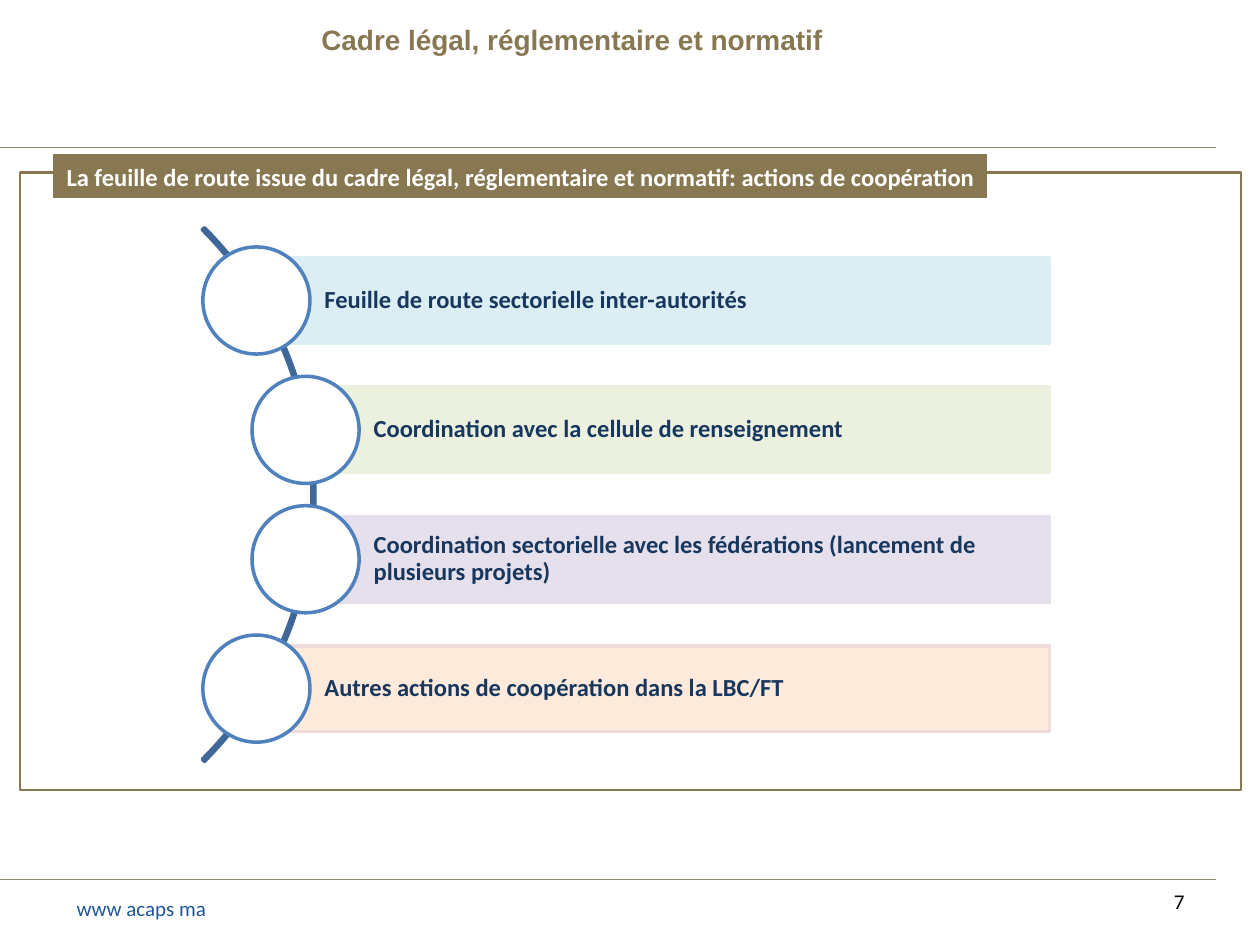
from dataclasses import dataclass

from lxml import etree
from pptx import Presentation
from pptx.dml.color import RGBColor
from pptx.enum.shapes import MSO_CONNECTOR, MSO_SHAPE
from pptx.enum.text import MSO_ANCHOR, PP_ALIGN
from pptx.oxml.ns import qn
from pptx.util import Inches, Pt

RECTANGLE, OVAL, ARC = MSO_SHAPE.RECTANGLE, MSO_SHAPE.OVAL, MSO_SHAPE.BLOCK_ARC
STRAIGHT = MSO_CONNECTOR.STRAIGHT
LEFT, CENTER, RIGHT = PP_ALIGN.LEFT, PP_ALIGN.CENTER, PP_ALIGN.RIGHT
TOP, MIDDLE = MSO_ANCHOR.TOP, MSO_ANCHOR.MIDDLE

SLIDE_WIDTH, SLIDE_HEIGHT = Inches(10), Inches(7.5)
COLUMNS, ROWS = 1000, 750


@dataclass(frozen=True)
class Theme:
    """Colours, fonts and type sizes of the slide."""

    gold: str = "887852"
    rule: str = "90876B"
    link: str = "205595"
    navy: str = "17375E"
    arc: str = "3F6797"
    ring: str = "4F81BD"
    white: str = "FFFFFF"
    black: str = "000000"
    body_font: str = "Calibri"
    title_font: str = "Arial"
    title_size: int = 16
    body_size: int = 14
    small_size: int = 12


@dataclass(frozen=True)
class Box:
    """A rectangle in grid columns and rows."""

    left: float
    top: float
    width: float
    height: float

    def emu(self):
        """Return left, top, width and height as slide lengths."""
        column, row = SLIDE_WIDTH / COLUMNS, SLIDE_HEIGHT / ROWS
        return (round(self.left * column), round(self.top * row),
                round(self.width * column), round(self.height * row))


THEME = Theme()
ACTIONS = [
    ("Feuille de route sectorielle inter-autorités", "DBEEF4", "DBEEF4", 0),
    ("Coordination avec la cellule de renseignement", "EBF1DE", "EBF1DE", 39),
    ("Coordination sectorielle avec les fédérations (lancement de plusieurs projets)",
     "E6E0EC", "E6E0EC", 39),
    ("Autres actions de coopération dans la LBC/FT", "FDEADA", "F2DCDB", 0),
]


def write_text(shape, text, *, size, color, font=THEME.body_font, bold=False,
               align=LEFT, anchor=TOP, insets=(0.1, 0.05, 0.1, 0.05), spacing=1.0):
    """Write one formatted paragraph into a shape."""
    frame = shape.text_frame
    frame.word_wrap = True
    frame.vertical_anchor = anchor
    (frame.margin_left, frame.margin_top,
     frame.margin_right, frame.margin_bottom) = map(Inches, insets)
    paragraph = frame.paragraphs[0]
    paragraph.text = text
    paragraph.alignment = align
    paragraph.line_spacing = spacing
    paragraph.font.name = font
    paragraph.font.size = Pt(size)
    paragraph.font.bold = bold
    paragraph.font.color.rgb = RGBColor.from_string(color)


def add_label(slide, box, text, **text_format):
    """Add a text box holding one paragraph."""
    write_text(slide.shapes.add_textbox(*box.emu()), text, **text_format)


def add_figure(slide, kind, box, *, line, width, fill=None):
    """Add a preset shape without shadow."""
    shape = slide.shapes.add_shape(kind, *box.emu())
    shape.shadow.inherit = False
    if fill:
        shape.fill.solid()
        shape.fill.fore_color.rgb = RGBColor.from_string(fill)
    else:
        shape.fill.background()
    shape.line.color.rgb = RGBColor.from_string(line)
    shape.line.width = Pt(width)
    return shape


def add_rule(slide, box):
    """Draw a thin line along the top of a box."""
    left, top, width, _ = box.emu()
    rule = slide.shapes.add_connector(STRAIGHT, left, top, left + width, top)
    rule.line.color.rgb = RGBColor.from_string(THEME.rule)
    rule.line.width = Pt(0.75)
    etree.SubElement(rule._element.spPr, qn("a:effectLst"))


def add_header(slide, box):
    """Place the slide title and the rule under it."""
    add_rule(slide, Box(box.left, box.top + box.height, box.width, 0))
    add_label(slide, Box(box.left + 135, box.top + 13, 638, 37),
              "Cadre légal, réglementaire et normatif", font=THEME.title_font,
              size=THEME.title_size, color=THEME.gold, bold=True, align=CENTER)


def add_footer(slide, box):
    """Place the rule, the web address and the page number."""
    add_rule(slide, box)
    add_label(slide, Box(box.left + 51, box.top + 8, 157, 30), "www acaps ma",
              size=THEME.small_size, color=THEME.link)
    add_label(slide, Box(box.left + box.width - 248, box.top - 3, 233, 40), "7",
              size=THEME.small_size, color=THEME.black, align=RIGHT, anchor=MIDDLE)


def add_panel(slide, box):
    """Place the outlined panel with its heading across the top edge."""
    add_figure(slide, RECTANGLE, box, line=THEME.gold, width=1.5)
    heading = add_figure(slide, RECTANGLE, Box(box.left + 27, box.top - 14, 740, 34),
                         fill=THEME.gold, line=THEME.gold, width=0.75)
    write_text(heading, "La feuille de route issue du cadre légal, réglementaire "
               "et normatif: actions de coopération", size=THEME.body_size,
               color=THEME.white, bold=True, anchor=MIDDLE,
               insets=(0.1, 0.07, 0, 0.07))


def add_roadmap(slide, box):
    """Place the arc and one circle and bar for each action."""
    circle, bar, arc_size = 85, 68, 599
    pitch = (box.height - circle) / (len(ACTIONS) - 1)
    arc_top = box.top + (box.height - arc_size) / 2
    arc = add_figure(slide, ARC, Box(box.left - 510, arc_top, arc_size, arc_size),
                     line=THEME.arc, width=2)
    for index, value in enumerate((189, 27, 0.004)):
        arc.adjustments[index] = value
    for index, (text, fill, line, indent) in enumerate(ACTIONS):
        left, top = box.left + indent, box.top + index * pitch
        start = left + circle / 2
        strip = Box(start, top + (circle - bar) / 2, box.left + box.width - start, bar)
        write_text(add_figure(slide, RECTANGLE, strip, fill=fill, line=line, width=2),
                   text, size=THEME.body_size, color=THEME.navy, bold=True,
                   anchor=MIDDLE, insets=(0.54, 0.04, 0.04, 0.04), spacing=0.9)
        add_figure(slide, OVAL, Box(left, top, circle, circle),
                   fill=THEME.white, line=THEME.ring, width=2)


def main():
    """Build and save the presentation."""
    presentation = Presentation()
    presentation.slide_width, presentation.slide_height = SLIDE_WIDTH, SLIDE_HEIGHT
    slide = presentation.slides.add_slide(presentation.slide_layouts[6])
    add_header(slide, Box(0, 0, 965, 117))
    add_footer(slide, Box(0, 698, 965, 52))
    add_panel(slide, Box(16, 137, 969, 490))
    add_roadmap(slide, Box(161, 196, 672, 393))
    presentation.save("out.pptx")


if __name__ == "__main__":
    main()
